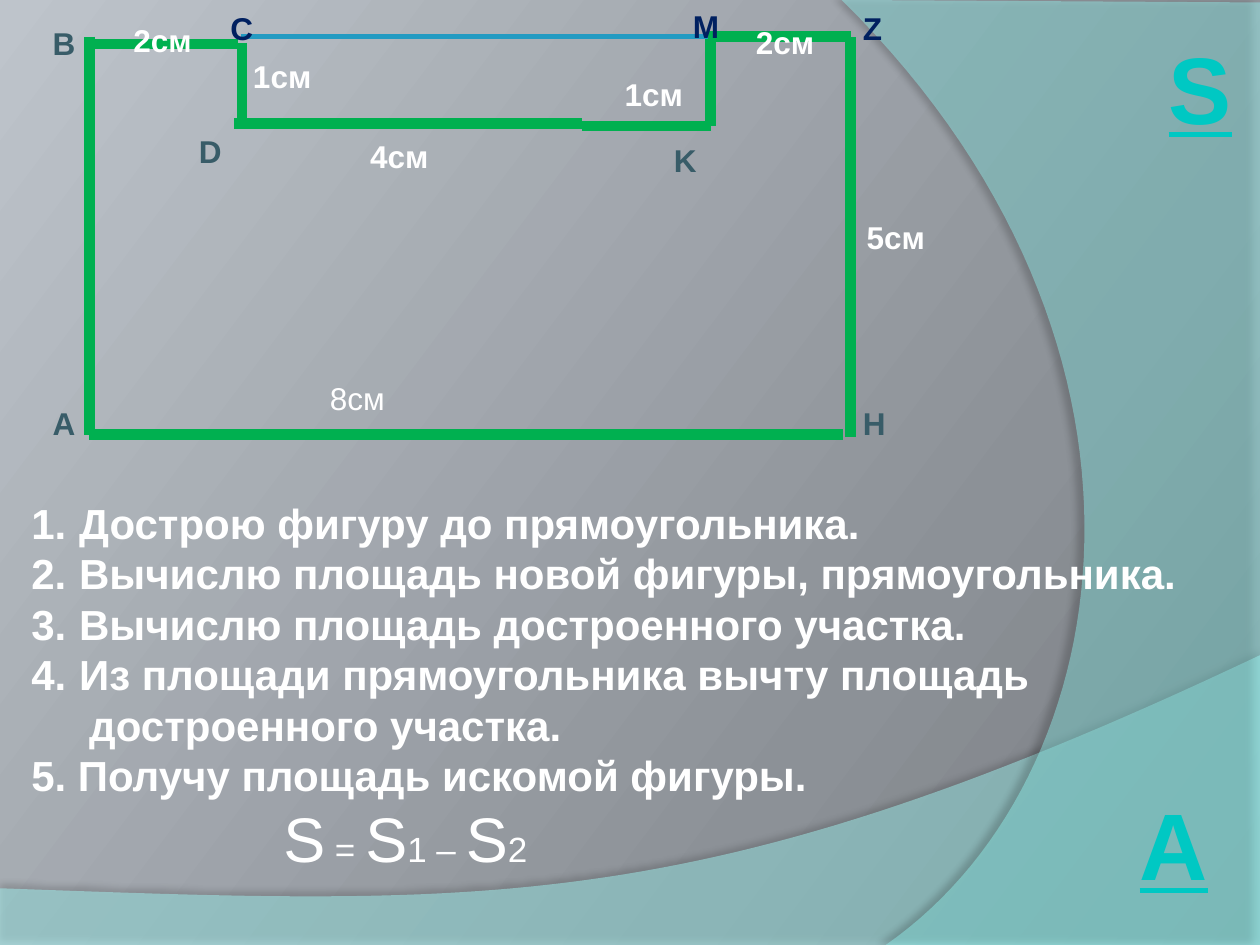
"""Build a slide on finding the area of a figure by completing it to a rectangle."""
from copy import deepcopy

from lxml.etree import SubElement as Sub
from pptx import Presentation
from pptx.dml.color import RGBColor as RGB
from pptx.enum.shapes import MSO_CONNECTOR as Link
from pptx.enum.text import MSO_AUTO_SIZE as Fit, PP_ALIGN as Align
from pptx.oxml.ns import qn
from pptx.util import Inches, Pt

WHITE = RGB(0xFF, 0xFF, 0xFF)
GREEN = RGB(0x00, 0xB0, 0x50)
BLUE = RGB(0x23, 0x9B, 0xC2)
SLATE = RGB(0x38, 0x5C, 0x68)
NAVY = RGB(0x00, 0x20, 0x60)
TEAL = RGB(0x00, 0xC8, 0xC3)
MINT = RGB(0xA6, 0xFF, 0xFC)
AQUA = RGB(0x96, 0xFF, 0xFB)
FONT = "Arial"

BACK = [(0, RGB(0x75, 0x79, 0x7E)), (0.3, RGB(0x8C, 0x91, 0x97)),
        (1, RGB(0xBE, 0xC4, 0xCB))]

# Each wave: corners, curve controls with end, last corners, colour, opacity, shadow
WAVES = [
    ([(0, 7.05), (0, 7.51), (10, 7.51), (10, 5.2)],
     [(5.59, 7.29), (3.91, 7.19), (0, 7.05)], MINT, 45, (35, 3.5, 270)),
    ([(6.68, 0), (10, 0.02), (10, 7.5), (7.03, 7.5)],
     [(8.91, 6.19), (9.47, 2.75), (6.68, 0)], AQUA, 40, (45, 4, 180)),
]

STEPS = ["Дострою фигуру до прямоугольника.",
         "Вычислю площадь новой фигуры, прямоугольника.",
         "Вычислю площадь достроенного участка.",
         "Из площади прямоугольника вычту площадь"]
REST = [("достроенного участка.", 0.46), ("5. Получу площадь искомой фигуры.", 0)]
FORMULA = [("S", 36), (" = ", 20), ("S", 36), ("1 – ", 20), ("S", 36), ("2", 20)]

SIDES = [
    (1.92, 0.34, 1.92, 0.97), (1.86, 0.98, 4.62, 0.98), (1.89, 0.35, 0.71, 0.35),
    (0.71, 0.29, 0.71, 3.45), (0.71, 3.45, 6.69, 3.45), (4.62, 1, 5.64, 1),
    (6.75, 3.47, 6.75, 0.29), (5.64, 0.29, 5.64, 1), (5.62, 0.29, 6.75, 0.29),
]
ADDED = (1.91, 0.29, 5.62, 0.29)

POINTS = [("A", 0.32, 3.16, SLATE), ("B", 0.32, 0.14, SLATE), ("D", 1.48, 1, SLATE),
          ("K", 5.25, 1.07, SLATE), ("H", 6.75, 3.16, SLATE), ("С", 1.73, 0.02, NAVY),
          ("M", 5.4, 0.01, NAVY), ("Z", 6.75, 0.02, NAVY)]
SIZES = [("2см", 0.96, 0.12), ("1см", 1.91, 0.4), ("4см", 2.84, 1.04),
         ("1см", 4.86, 0.55), ("5см", 6.78, 1.68), ("2см", 5.9, 0.13)]
MARKS = [("А", 8.94, 6.19, 0.75), ("S", 9.17, 0.19, 0.71)]


def curve(start, ctrl, end, target, count=60):
    for i in range(1, count + 1):
        t = i / count
        u = 1 - t
        yield tuple(u**3 * a + 3 * u * u * t * b + 3 * u * t * t * c + t**3 * d
                    for a, b, c, d in zip(start, ctrl, end, target))


def paint(slide):
    fill = slide.background.fill
    fill.gradient()
    stops = slide.element.find(".//" + qn("a:gsLst"))
    stops.append(deepcopy(stops[0]))
    for stop, (place, color) in zip(fill.gradient_stops, BACK):
        stop.position = place
        stop.color.rgb = color
    fill.gradient_angle = 143


def wave(slide, edge, bend, color, alpha, shadow):
    dots = edge + list(curve(edge[-1], *bend))
    pen = slide.shapes.build_freeform(*map(Inches, dots[0]))
    pen.add_line_segments([(Inches(x), Inches(y)) for x, y in dots[1:]])
    shape = pen.convert_to_shape()
    shape.fill.solid()
    shape.fill.fore_color.rgb = color
    shape.line.fill.background()
    props = shape.element.spPr
    Sub(props.find(".//" + qn("a:srgbClr")), qn("a:alpha"), val=str(alpha * 1000))
    dark, dist, angle = shadow
    glow = Sub(Sub(props, qn("a:effectLst")), qn("a:outerShdw"), blurRad=str(Pt(4)),
               dist=str(Pt(dist)), dir=str(angle * 60000), algn="ctr", rotWithShape="0")
    tint = Sub(glow, qn("a:srgbClr"), val="000000")
    Sub(tint, qn("a:alpha"), val=str(dark * 1000))


def line(slide, ends, color=GREEN, width=6):
    link = slide.shapes.add_connector(Link.STRAIGHT, *map(Inches, ends))
    link.line.color.rgb = color
    link.line.width = Pt(width)
    Sub(link.element.spPr, qn("a:effectLst"))


def style(para, size, color, bold=True):
    font = para.font
    font.name, font.size, font.bold = FONT, Pt(size), bold
    font.color.rgb = color


def box(slide, left, top, width, height):
    frame = slide.shapes.add_textbox(*map(Inches, (left, top, width, height))).text_frame
    frame.word_wrap = False
    frame.auto_size = Fit.SHAPE_TO_FIT_TEXT
    return frame


def label(slide, text, left, top, color=WHITE, width=0.67, bold=True):
    para = box(slide, left, top, width, 0.4).paragraphs[0]
    para.text = text
    style(para, 18, color, bold)


def mark(slide, text, left, top, width):
    para = box(slide, left, top, width, 1.01).paragraphs[0]
    para.text = text
    para.alignment = Align.CENTER
    style(para, 54, TEAL)
    para.font.underline = True


def indent(para, left, first=0):
    props = para._p.get_or_add_pPr()
    props.set("marL", str(Inches(left)))
    props.set("indent", str(Inches(first)))
    return props


def plan(slide):
    frame = box(slide, 0.15, 3.9, 9.37, 3.13)
    para = frame.paragraphs[0]
    for i, text in enumerate(STEPS):
        para = frame.add_paragraph() if i else para
        para.text = text
        style(para, 24, WHITE)
        props = indent(para, 0.38, -0.38)
        num = props.makeelement(qn("a:buAutoNum"), {"type": "arabicPeriod"})
        props.insert(0, num)
    for text, left in REST:
        para = frame.add_paragraph()
        para.text = text
        style(para, 24, WHITE)
        indent(para, left)
    para = frame.add_paragraph()
    style(para, 20, WHITE, False)
    indent(para, 2)
    for text, size in FORMULA:
        run = para.add_run()
        run.text = text
        run.font.size = Pt(size)


def main():
    deck = Presentation()
    deck.slide_width, deck.slide_height = Inches(10), Inches(7.5)
    slide = deck.slides.add_slide(deck.slide_layouts[6])
    paint(slide)
    for item in WAVES:
        wave(slide, *item)
    plan(slide)
    for ends in SIDES:
        line(slide, ends)
    line(slide, ADDED, BLUE, 3)
    for text, left, top, color in POINTS:
        label(slide, text, left, top, color, 0.38)
    for item in SIZES:
        label(slide, *item)
    label(slide, "8см", 2.52, 2.96, bold=False)
    for item in MARKS:
        mark(slide, *item)
    deck.save("out.pptx")


if __name__ == "__main__":
    main()
